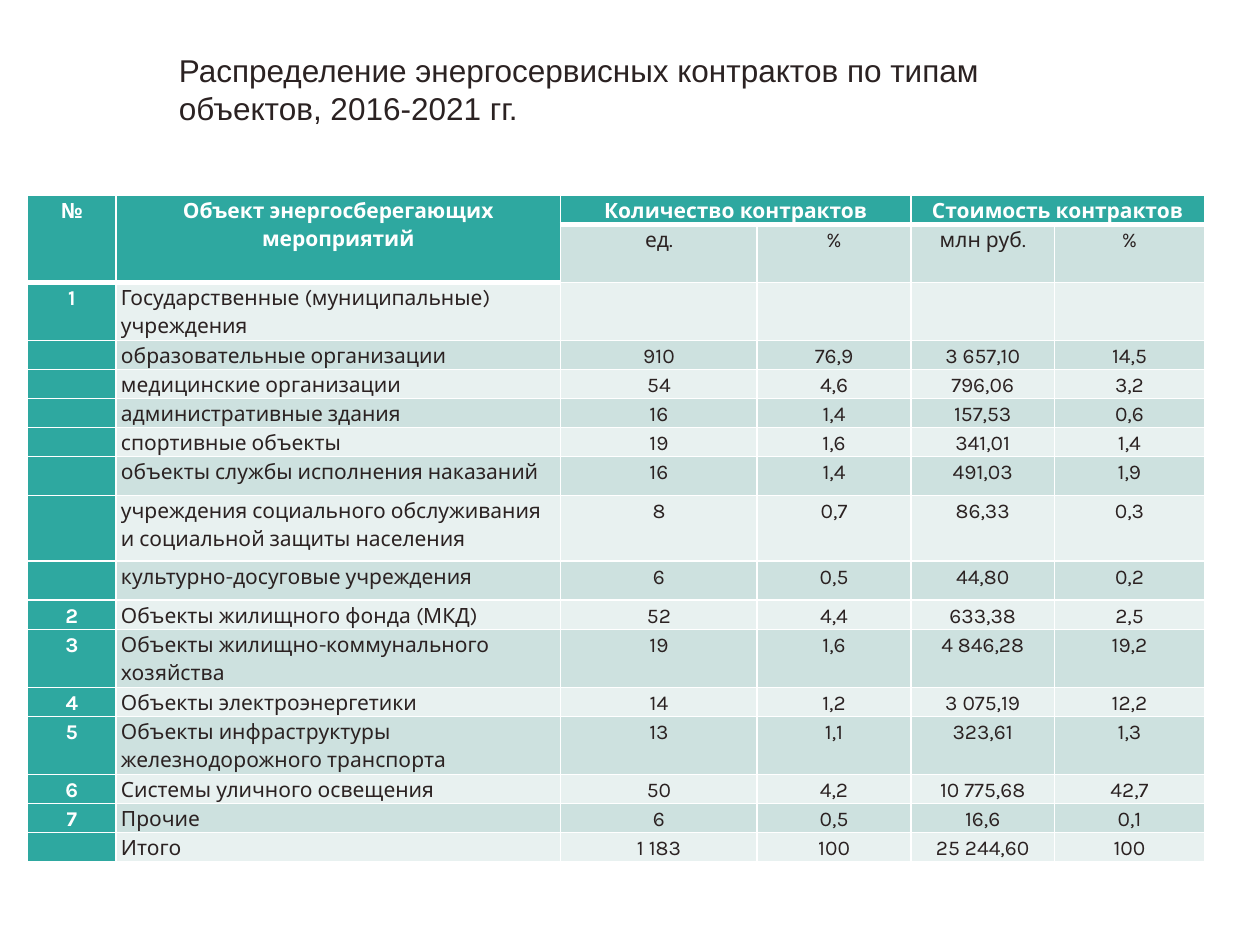
from lxml import etree
from pptx import Presentation, util as u
from pptx.dml.color import RGBColor
from pptx.enum import text
from pptx.oxml import ns

TEAL = RGBColor(0x2E, 0xA8, 0xA0)
BAND_DARK = RGBColor(0xCD, 0xE1, 0xDF)
BAND_LIGHT = RGBColor(0xE8, 0xF1, 0xF0)
WHITE = RGBColor(0xFF, 0xFF, 0xFF)
INK = RGBColor(0x2B, 0x22, 0x22)
WIDTH, HEIGHT = u.Inches(10), u.Inches(7.5)
TITLE = "Распределение энергосервисных контрактов по типам объектов, 2016-2021 гг."
COLUMNS = [0.7, 3.53, 1.56, 1.22, 1.14, 1.19]
ROWS = [0.1, 0.32, 0.42, 0.2, 0.2, 0.2, 0.2, 0.31, 0.52, 0.31,
        0.2, 0.42, 0.13, 0.42, 0.16, 0.1, 0.1]
HEADER_SPANS = [(0, 0, 1, 0), (0, 1, 1, 1), (0, 2, 0, 3), (0, 4, 0, 5)]
CONTRACTS = [
    ["№", "Объект энергосберегающих мероприятий", "Количество контрактов", "",
     "Стоимость контрактов", ""],
    ["", "", "ед.", "%", "млн руб.", "%"],
    ["1", "Государственные (муниципальные) учреждения", "", "", "", ""],
    ["", "образовательные организации", "910", "76,9", "3 657,10", "14,5"],
    ["", "медицинские организации", "54", "4,6", "796,06", "3,2"],
    ["", "административные здания", "16", "1,4", "157,53", "0,6"],
    ["", "спортивные объекты", "19", "1,6", "341,01", "1,4"],
    ["", "объекты службы исполнения наказаний", "16", "1,4", "491,03", "1,9"],
    ["", "учреждения социального обслуживания и социальной защиты населения",
     "8", "0,7", "86,33", "0,3"],
    ["", "культурно-досуговые учреждения", "6", "0,5", "44,80", "0,2"],
    ["2", "Объекты жилищного фонда (МКД)", "52", "4,4", "633,38", "2,5"],
    ["3", "Объекты жилищно-коммунального хозяйства", "19", "1,6", "4 846,28", "19,2"],
    ["4", "Объекты электроэнергетики", "14", "1,2", "3 075,19", "12,2"],
    ["5", "Объекты инфраструктуры железнодорожного транспорта",
     "13", "1,1", "323,61", "1,3"],
    ["6", "Системы уличного освещения", "50", "4,2", "10 775,68", "42,7"],
    ["7", "Прочие", "6", "0,5", "16,6", "0,1"],
    ["", "Итого", "1 183", "100", "25 244,60", "100"],
]


def across(share):
    """Return a share of the slide's width."""
    return u.Emu(round(WIDTH * share))


def down(share):
    """Return a share of the slide's height."""
    return u.Emu(round(HEIGHT * share))


def add_span(para, words, size, face, color, bold=False):
    """Add one styled run to a paragraph."""
    span = para.add_run()
    span.text = words
    span.font.size, span.font.name, span.font.bold = u.Pt(size), face, bold
    span.font.color.rgb = color


def add_title(page):
    """Add the slide heading."""
    box = page.shapes.add_textbox(across(0.135), down(0.05), across(0.75), down(0.09))
    frame = box.text_frame
    frame.word_wrap = True
    frame.auto_size = text.MSO_AUTO_SIZE.SHAPE_TO_FIT_TEXT
    frame.margin_left = frame.margin_right = u.Inches(0.07)
    frame.margin_top = frame.margin_bottom = u.Inches(0.03)
    add_span(frame.paragraphs[0], TITLE, 18, "Arial", INK)


def set_borders(cell, bottom):
    """Draw white borders with the given bottom width in points."""
    properties = cell._tc.get_or_add_tcPr()
    widths = {"lnL": 1, "lnR": 1, "lnT": 1, "lnB": bottom}
    for place, (side, width) in enumerate(widths.items()):
        line = etree.Element(ns.qn(f"a:{side}"), w=str(u.Pt(width)))
        fill = etree.SubElement(line, ns.qn("a:solidFill"))
        etree.SubElement(fill, ns.qn("a:srgbClr"), val=str(WHITE))
        properties.insert(place, line)


def fill_cell(cell, words, row, column):
    """Style a cell by its place in the table and write its text."""
    header = row == 0 or (row == 1 and column < 2)
    accent = header or column == 0
    cell.margin_left = cell.margin_right = u.Inches(0.04)
    cell.margin_top = cell.margin_bottom = 0
    cell.fill.solid()
    band = BAND_DARK if row % 2 else BAND_LIGHT
    cell.fill.fore_color.rgb = TEAL if accent else band
    set_borders(cell, 3 if header else 1)
    para = cell.text_frame.paragraphs[0]
    para.line_spacing, para.space_after = 1.15, u.Pt(6)
    if accent or column != 1:
        para.alignment = text.PP_ALIGN.CENTER
    if words:
        add_span(para, words, 12, "Karla", WHITE if accent else INK, accent)
    else:
        etree.SubElement(para._p, ns.qn("a:endParaRPr"), sz="1200")


def add_contracts(page):
    """Add the table of contracts by type of object."""
    frame = page.shapes.add_table(len(ROWS), len(COLUMNS), across(0.022), down(0.207),
                                  across(0.935), down(0.65))
    table = frame.table
    table.first_row = table.horz_banding = False
    for column, width in zip(table.columns, COLUMNS):
        column.width = u.Inches(width)
    for row, height in zip(table.rows, ROWS):
        row.height = u.Inches(height)
    frame.height = down(0.65)
    for row, values in enumerate(CONTRACTS):
        for column, words in enumerate(values):
            fill_cell(table.cell(row, column), words, row, column)
    for top, left, bottom, right in HEADER_SPANS:
        table.cell(top, left).merge(table.cell(bottom, right))


def main():
    """Build and save the deck."""
    deck = Presentation()
    deck.slide_width, deck.slide_height = WIDTH, HEIGHT
    page = deck.slides.add_slide(deck.slide_layouts[6])
    add_title(page)
    add_contracts(page)
    deck.save("out.pptx")


if __name__ == "__main__":
    main()
